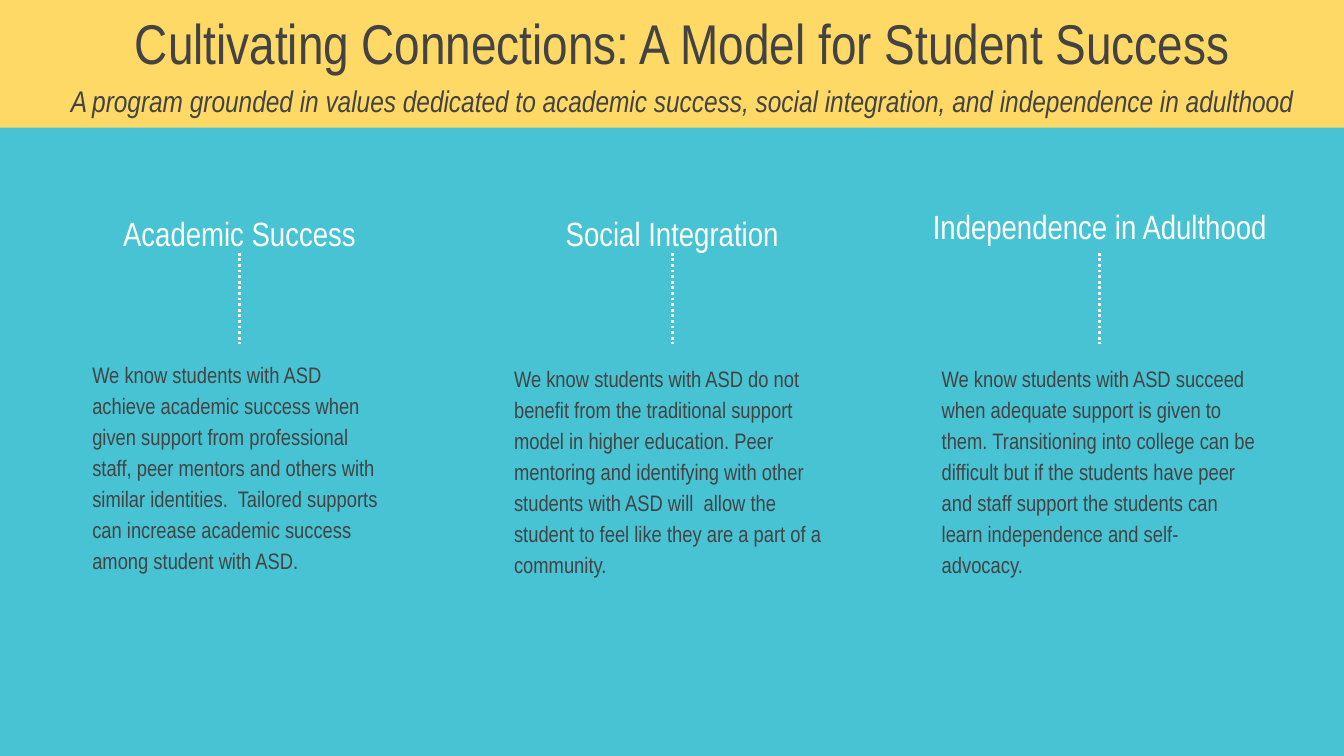
from dataclasses import dataclass

from lxml.etree import SubElement
from pptx import Presentation
from pptx.dml.color import RGBColor as RGB
from pptx.enum.dml import MSO_LINE
from pptx.enum.shapes import MSO_CONNECTOR as CONNECTOR, MSO_SHAPE as SHAPE
from pptx.enum.text import MSO_ANCHOR as ANCHOR, MSO_AUTO_SIZE as AUTO_SIZE, PP_ALIGN as ALIGN
from pptx.oxml.ns import qn
from pptx.util import Pt


@dataclass(frozen=True)
class Theme:
    font: str = "Arial Narrow"
    background: RGB = RGB(0x47, 0xC3, 0xD3)
    band: RGB = RGB(0xFF, 0xD9, 0x66)
    dark: RGB = RGB(0x43, 0x43, 0x43)
    light: RGB = RGB(0xFF, 0xFF, 0xFF)
    title: int = 30
    subtitle: int = 16
    heading: int = 18
    body: int = 12


@dataclass(frozen=True)
class Column:
    center: float
    heading_top: float
    heading_width: float
    body_top: float
    body_width: float
    heading: str
    body: str


THEME = Theme()
LINE_TOP, LINE_BOTTOM = 135.4, 184.3
COLUMNS = [
    Column(128.3, 102.2, 159.1, LINE_BOTTOM, 172.1, "Academic Success",
           "We know students with ASD achieve academic success when given support "
           "from professional staff, peer mentors and others with similar identities.  "
           "Tailored supports can increase academic success among student with ASD."),
    Column(360.1, 102.2, 159.1, 186.5, 183.6, "Social Integration",
           "We know students with ASD do not benefit from the traditional support model "
           "in higher education. Peer mentoring and identifying with other students with "
           "ASD will  allow the student to feel like they are a part of a community."),
    Column(589.2, 98.6, 195.8, 186.5, 183.6, "Independence in Adulthood",
           "We know students with ASD succeed when adequate support is given to them. "
           "Transitioning into college can be difficult but if the students have peer and "
           "staff support the students can learn independence and self-advocacy."),
]


def place(sp, left, top, width, height):
    sp.left, sp.top, sp.width, sp.height = Pt(left), Pt(top), Pt(width), Pt(height)


def format_frame(tf, anchor=ANCHOR.TOP):
    tf.word_wrap = True
    tf.auto_size = AUTO_SIZE.NONE
    tf.vertical_anchor = anchor
    tf.margin_left = tf.margin_right = tf.margin_top = tf.margin_bottom = Pt(7.2)


def write(p, text, size, color, align=ALIGN.LEFT, italic=False, spacing=1.0, after=0):
    p.alignment = align
    p.line_spacing = spacing
    p.space_before, p.space_after = Pt(0), Pt(after)
    r = p.add_run()
    r.text = text
    r.font.name, r.font.size, r.font.italic = THEME.font, Pt(size), italic
    r.font.color.rgb = color


def remove_bullet(p):
    pPr = p._p.get_or_add_pPr()
    pPr.set("marL", "0")
    pPr.set("indent", "0")
    SubElement(pPr, qn("a:buNone"))


def add_header(s):
    title = s.shapes.title
    place(title, 30.2, -2.9, 671, 79.9)
    tf = title.text_frame
    format_frame(tf)
    write(tf.paragraphs[0], "Cultivating Connections: A Model for Student Success",
          THEME.title, THEME.dark, ALIGN.CENTER, after=4)
    write(tf.add_paragraph(),
          "A program grounded in values dedicated to academic success, "
          "social integration, and independence in adulthood",
          THEME.subtitle, THEME.dark, ALIGN.CENTER, italic=True, after=4)

    band = s.shapes.add_shape(SHAPE.RECTANGLE, Pt(0), Pt(-5.8), Pt(721.4), Pt(74.2))
    band.shadow.inherit = False
    band.fill.solid()
    band.fill.fore_color.rgb = THEME.band
    band.line.fill.background()
    title.element.addprevious(band.element)  # behind the title


def add_heading(s, col):
    sp = s.shapes.add_textbox(Pt(col.center - col.heading_width / 2), Pt(col.heading_top),
                              Pt(col.heading_width), Pt(45.4))
    format_frame(sp.text_frame, ANCHOR.MIDDLE)
    write(sp.text_frame.paragraphs[0], col.heading, THEME.heading, THEME.light, ALIGN.CENTER)


def fill_body(sp, col):
    place(sp, col.center - col.body_width / 2, col.body_top, col.body_width, 214)
    format_frame(sp.text_frame)
    p = sp.text_frame.paragraphs[0]
    write(p, col.body, THEME.body, THEME.dark, spacing=1.15, after=16)
    remove_bullet(p)


def add_dotted_line(s, col, body):
    line = s.shapes.add_connector(CONNECTOR.STRAIGHT, Pt(col.center), Pt(LINE_TOP),
                                  Pt(col.center), Pt(LINE_BOTTOM))
    line.line.color.rgb = THEME.light
    line.line.width = Pt(1.5)
    line.line.dash_style = MSO_LINE.ROUND_DOT
    SubElement(line.element.spPr, qn("a:effectLst"))
    if col.body_top == LINE_BOTTOM:
        line.end_connect(body, 0)


def main():
    prs = Presentation()
    prs.slide_width, prs.slide_height = Pt(720), Pt(405)
    s = prs.slides.add_slide(prs.slide_layouts[1])
    s.background.fill.solid()
    s.background.fill.fore_color.rgb = THEME.background

    add_header(s)
    for i, col in enumerate(COLUMNS):
        add_heading(s, col)
        body = s.placeholders[1] if i == 0 else s.shapes.add_textbox(0, 0, 0, 0)
        fill_body(body, col)
        add_dotted_line(s, col, body)

    prs.save("out.pptx")


if __name__ == "__main__":
    main()
